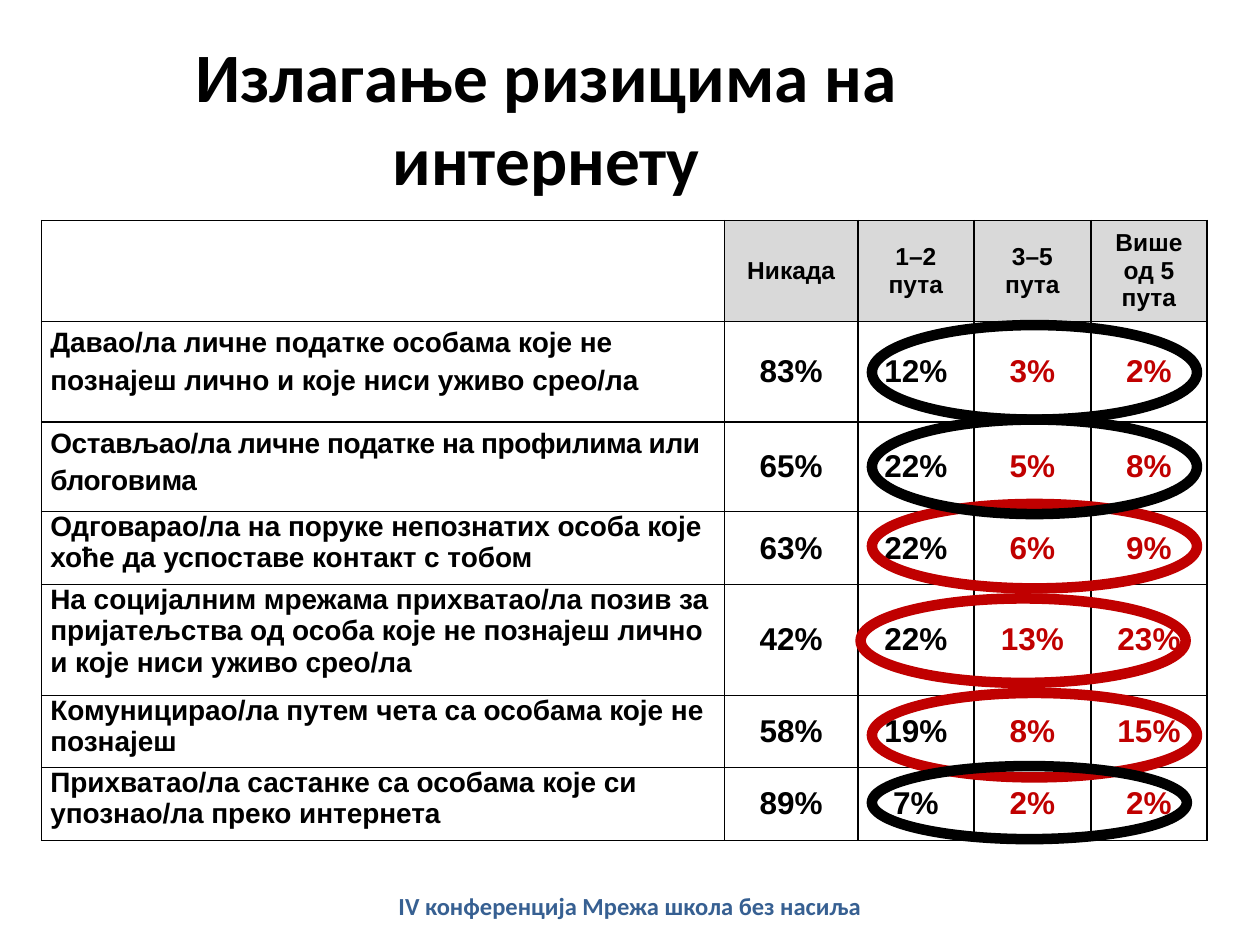
from lxml import etree
from pptx import Presentation
from pptx.dml.color import RGBColor
from pptx.enum import shapes, text
from pptx.oxml import ns
from pptx.util import Inches, Pt

BLACK, RED, GREY, BLUE = "000000", "C00000", "D9D9D9", "376092"

COLUMN_WIDTHS = [5.42, 1.06, 0.92, 0.93, 0.92]
ROW_HEIGHTS = [0.8, 0.8, 0.71, 0.58, 0.88, 0.57, 0.58]
HEADER = ["", "Никада", "1–2 пута", "3–5 пута", "Више од 5 пута"]
ANSWERS = [
    ["Давао/ла личне податке особама које не познајеш лично и које ниси уживо срео/ла",
     "83%", "12%", "3%", "2%"],
    ["Остављао/ла личне податке на профилима или блоговима",
     "65%", "22%", "5%", "8%"],
    ["Одговарао/ла на поруке непознатих особа које хоће да успоставе контакт с тобом",
     "63%", "22%", "6%", "9%"],
    ["На социјалним мрежама прихватао/ла позив за пријатељства од особа које не "
     "познајеш лично и које ниси уживо срео/ла",
     "42%", "22%", "13%", "23%"],
    ["Комуницирао/ла путем чета са особама које не познајеш",
     "58%", "19%", "8%", "15%"],
    ["Прихватао/ла састанке са особама које си упознао/ла преко интернета",
     "89%", "7%", "2%", "2%"],
]
# Left, top, width, height and colour, from back to front
RINGS = [
    (6.83, 4.75, 2.58, 0.67, RED),
    (6.92, 5.5, 2.58, 0.67, RED),
    (6.92, 6.08, 2.5, 0.58, BLACK),
    (6.92, 4, 2.58, 0.67, RED),
    (6.92, 2.58, 2.58, 0.75, BLACK),
    (6.92, 3.33, 2.58, 0.75, BLACK),
]


def rgb(value):
    return RGBColor.from_string(value)


def style_paragraph(paragraph, font_name, size, color, centred=True):
    paragraph.alignment = text.PP_ALIGN.CENTER if centred else text.PP_ALIGN.LEFT
    font = paragraph.font
    font.name, font.size, font.bold = font_name, Pt(size), True
    font.color.rgb = rgb(color)


def add_text(slide, box, words, size, color, anchor):
    frame = slide.shapes.add_textbox(*map(Inches, box)).text_frame
    frame.word_wrap = True
    frame.vertical_anchor = anchor
    frame.margin_top = frame.margin_bottom = 0
    frame.text = words
    style_paragraph(frame.paragraphs[0], "Calibri", size, color)


def set_borders(cell):
    properties = cell._tc.get_or_add_tcPr()
    for index, side in enumerate(("lnL", "lnR", "lnT", "lnB")):
        line = etree.Element(ns.qn(f"a:{side}"), w=str(Pt(1)))
        fill = etree.SubElement(line, ns.qn("a:solidFill"))
        etree.SubElement(fill, ns.qn("a:srgbClr"), val=BLACK)
        properties.insert(index, line)


def fill_cell(cell, words, row, column):
    is_header, is_question = row == 0, column == 0
    cell.margin_left = cell.margin_right = Inches(0.07)
    cell.margin_top = cell.margin_bottom = 0
    if is_header and not is_question:
        cell.fill.solid()
        cell.fill.fore_color.rgb = rgb(GREY)
    else:
        cell.fill.background()
    set_borders(cell)
    if not words:
        return
    cell.vertical_anchor = text.MSO_ANCHOR.TOP if is_question else text.MSO_ANCHOR.MIDDLE
    cell.text = words
    paragraph = cell.text_frame.paragraphs[0]
    size = 14 if is_header else 16 if is_question else 18
    color = RED if column >= 3 and not is_header else BLACK
    style_paragraph(paragraph, "Arial", size, color, centred=not is_question)
    # The first two questions are set with wider lines
    if is_question and row <= 2:
        paragraph.line_spacing = 1.2
    # The second question is slightly condensed
    if is_question and row == 2:
        paragraph.runs[0]._r.get_or_add_rPr().set("spc", "-20")


def add_answer_table(slide):
    rows = [HEADER] + ANSWERS
    table = slide.shapes.add_table(
        len(rows), len(HEADER), Inches(0.33), Inches(1.75),
        Inches(sum(COLUMN_WIDTHS)), Inches(sum(ROW_HEIGHTS))).table
    table.horz_banding = False
    for column, width in zip(table.columns, COLUMN_WIDTHS):
        column.width = Inches(width)
    for row, height in zip(table.rows, ROW_HEIGHTS):
        row.height = Inches(height)
    for row, values in enumerate(rows):
        for column, words in enumerate(values):
            fill_cell(table.cell(row, column), words, row, column)


def add_ring(slide, left, top, width, height, color):
    shape = slide.shapes.add_shape(
        shapes.MSO_SHAPE.OVAL, *map(Inches, (left, top, width, height)))
    shape.shadow.inherit = False
    shape.fill.background()
    shape.line.color.rgb = rgb(color)
    shape.line.width = Pt(6)


def main():
    presentation = Presentation()
    presentation.slide_width, presentation.slide_height = Inches(10), Inches(7.5)
    slide = presentation.slides.add_slide(presentation.slide_layouts[6])

    # Title and footer
    add_text(slide, (0.5, 0.3, 7.67, 1.25), "Излагање ризицима на интернету",
             39.6, BLACK, text.MSO_ANCHOR.MIDDLE)
    add_text(slide, (0, 7.07, 10, 0.4), "IV конференција Мрежа школа без насиља",
             14, BLUE, text.MSO_ANCHOR.TOP)

    # Answers, with the risky ones ringed
    add_answer_table(slide)
    for ring in RINGS:
        add_ring(slide, *ring)

    presentation.save("out.pptx")


if __name__ == "__main__":
    main()
